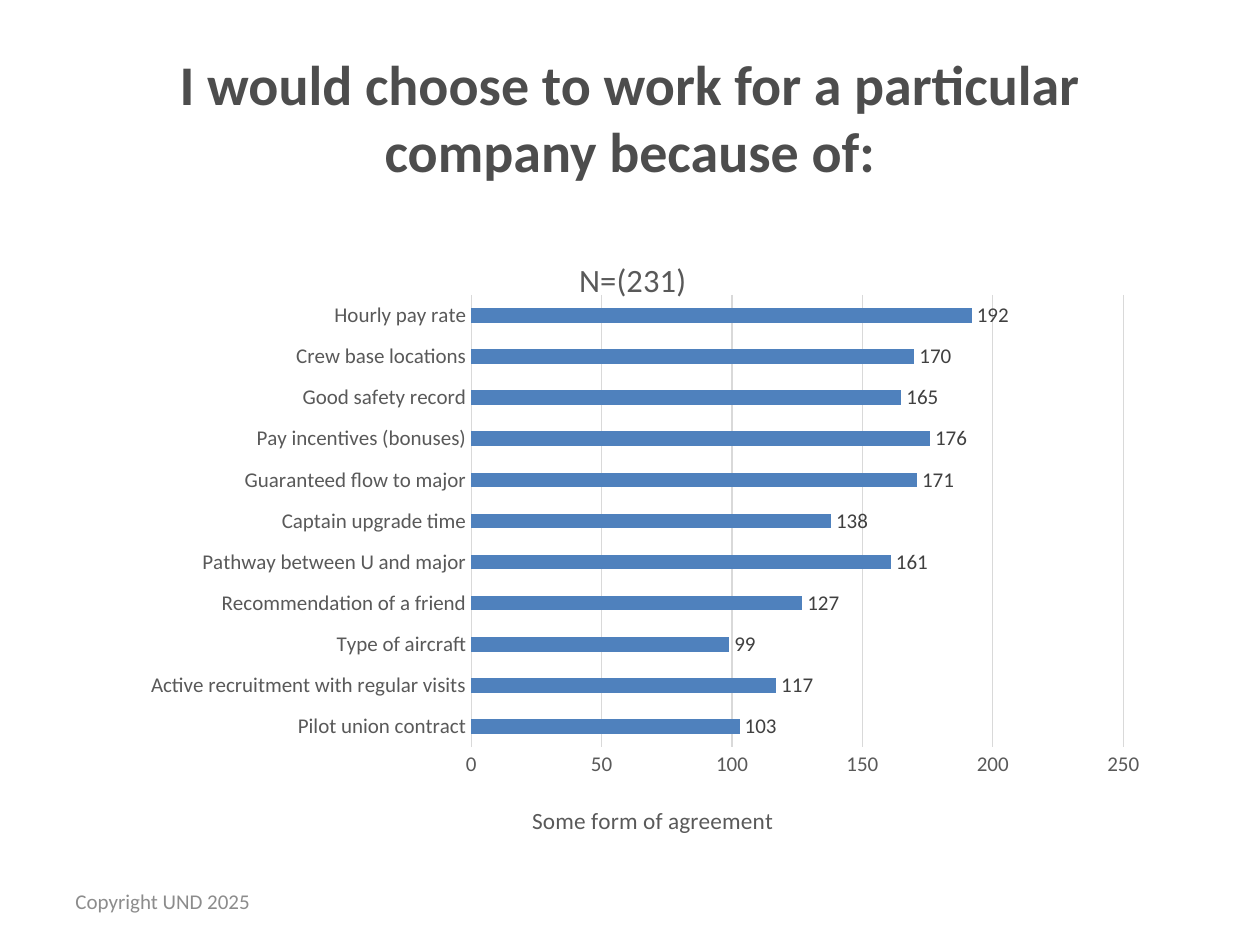
from lxml import etree
from pptx import Presentation
from pptx.chart.data import CategoryChartData
from pptx.dml.color import RGBColor
from pptx.enum.chart import XL_CHART_TYPE, XL_LABEL_POSITION, XL_TICK_MARK
from pptx.enum.text import MSO_ANCHOR, PP_ALIGN
from pptx.oxml.ns import qn
from pptx.util import Pt

EMU_PER_PX = 914400 / 126
BAR_CLUSTERED = XL_CHART_TYPE.BAR_CLUSTERED
OUTSIDE_END = XL_LABEL_POSITION.OUTSIDE_END
NO_TICK = XL_TICK_MARK.NONE
MIDDLE = MSO_ANCHOR.MIDDLE
LEFT, CENTER = PP_ALIGN.LEFT, PP_ALIGN.CENTER
TITLE_ONLY = 5

AGREEMENT = {
    "Pilot union contract": 103,
    "Active recruitment with regular visits": 117,
    "Type of aircraft": 99,
    "Recommendation of a friend": 127,
    "Pathway between U and major": 161,
    "Captain upgrade time": 138,
    "Guaranteed flow to major": 171,
    "Pay incentives (bonuses)": 176,
    "Good safety record": 165,
    "Crew base locations": 170,
    "Hourly pay rate": 192,
}


def px(length):
    return round(length * EMU_PER_PX)


def color(hex_string):
    return RGBColor.from_string(hex_string)


def set_layout(parent, **fractions):
    """Place a chart part by fractions of the chart's width and height."""
    layout = parent.find(qn("c:layout"))
    if layout is None:
        layout = etree.Element(qn("c:layout"))
        text = parent.find(qn("c:tx"))
        if text is None:
            parent.insert(0, layout)
        else:
            text.addnext(layout)
    for child in list(layout):
        layout.remove(child)
    manual = etree.SubElement(layout, qn("c:manualLayout"))
    if "w" in fractions:
        etree.SubElement(manual, qn("c:layoutTarget")).set("val", "inner")
    for name in ("x", "y"):
        etree.SubElement(manual, qn(f"c:{name}Mode")).set("val", "edge")
    for name, value in fractions.items():
        etree.SubElement(manual, qn(f"c:{name}")).set("val", str(value))


class SlideBuilder:
    font_name = "Calibri"
    gray = "595959"
    line_gray = "D9D9D9"
    bar_blue = "4F81BD"

    def __init__(self, slide):
        self.slide = slide

    def style(self, font, size, hex_string, bold=False):
        font.name = self.font_name
        font.size = Pt(size)
        font.bold = bold
        font.color.rgb = color(hex_string)

    def add_run(self, frame, text, size, hex_string, bold=False, align=LEFT):
        paragraph = frame.paragraphs[0]
        paragraph.alignment = align
        run = paragraph.add_run()
        run.text = text
        self.style(run.font, size, hex_string, bold)

    def title(self, text, left, top, width, height):
        shape = self.slide.shapes.title
        shape.left, shape.top = px(left), px(top)
        shape.width, shape.height = px(width), px(height)
        shape.text_frame.vertical_anchor = MIDDLE
        self.add_run(shape.text_frame, text, 32, "4D4D4D", True, CENTER)

    def text(self, text, left, top, width, height):
        shape = self.slide.shapes.add_textbox(px(left), px(top), px(width), px(height))
        shape.text_frame.word_wrap = True
        shape.text_frame.vertical_anchor = MIDDLE
        self.add_run(shape.text_frame, text, 12, "8C8C8C")

    def gray_line(self, line):
        line.color.rgb = color(self.line_gray)
        line.width = Pt(0.75)

    def chart_title(self, title, text, size, x, y):
        self.add_run(title.text_frame, text, size, self.gray, align=CENTER)
        set_layout(title._element, x=x, y=y)

    def bar_chart(self, values, left, top, width, height):
        data = CategoryChartData()
        data.categories = list(values)
        data.add_series("Series 1", list(values.values()))
        chart = self.slide.shapes.add_chart(
            BAR_CLUSTERED, px(left), px(top), px(width), px(height), data).chart
        self.style(chart.font, 10, "000000")
        chart.has_legend = False
        chart.has_title = True
        self.chart_title(chart.chart_title, "N=(231)", 18.6, 0.45, 0.05)
        set_layout(chart._chartSpace.chart.plotArea, x=0.36, y=0.12, w=0.575, h=0.725)

        for axis in (chart.category_axis, chart.value_axis):
            axis.major_tick_mark = axis.minor_tick_mark = NO_TICK
            self.style(axis.tick_labels.font, 12, self.gray)
        self.gray_line(chart.category_axis.format.line)
        value_axis = chart.value_axis
        value_axis.minimum_scale, value_axis.maximum_scale = 0, 250
        value_axis.major_unit = 50
        value_axis.format.line.fill.background()
        value_axis.has_major_gridlines = True
        self.gray_line(value_axis.major_gridlines.format.line)
        self.chart_title(value_axis.axis_title, "Some form of agreement", 13.3, 0.41, 0.93)

        plot = chart.plots[0]
        plot.gap_width = 182
        plot.vary_by_categories = False
        fill = plot.series[0].format.fill
        fill.solid()
        fill.fore_color.rgb = color(self.bar_blue)
        labels = plot.series[0].data_labels
        labels.show_value = True
        labels.position = OUTSIDE_END
        self.style(labels.font, 12, "404040")


def main():
    presentation = Presentation()
    presentation.slide_width, presentation.slide_height = px(1260), px(945)
    slide = presentation.slides.add_slide(presentation.slide_layouts[TITLE_ONLY])
    builder = SlideBuilder(slide)
    builder.title("I would choose to work for a particular company because of:",
                  63, 38, 1134, 158)
    builder.bar_chart(AGREEMENT, 63, 220, 1134, 624)
    builder.text("Copyright UND 2025", 63, 876, 294, 50)
    presentation.save("out.pptx")


if __name__ == "__main__":
    main()
